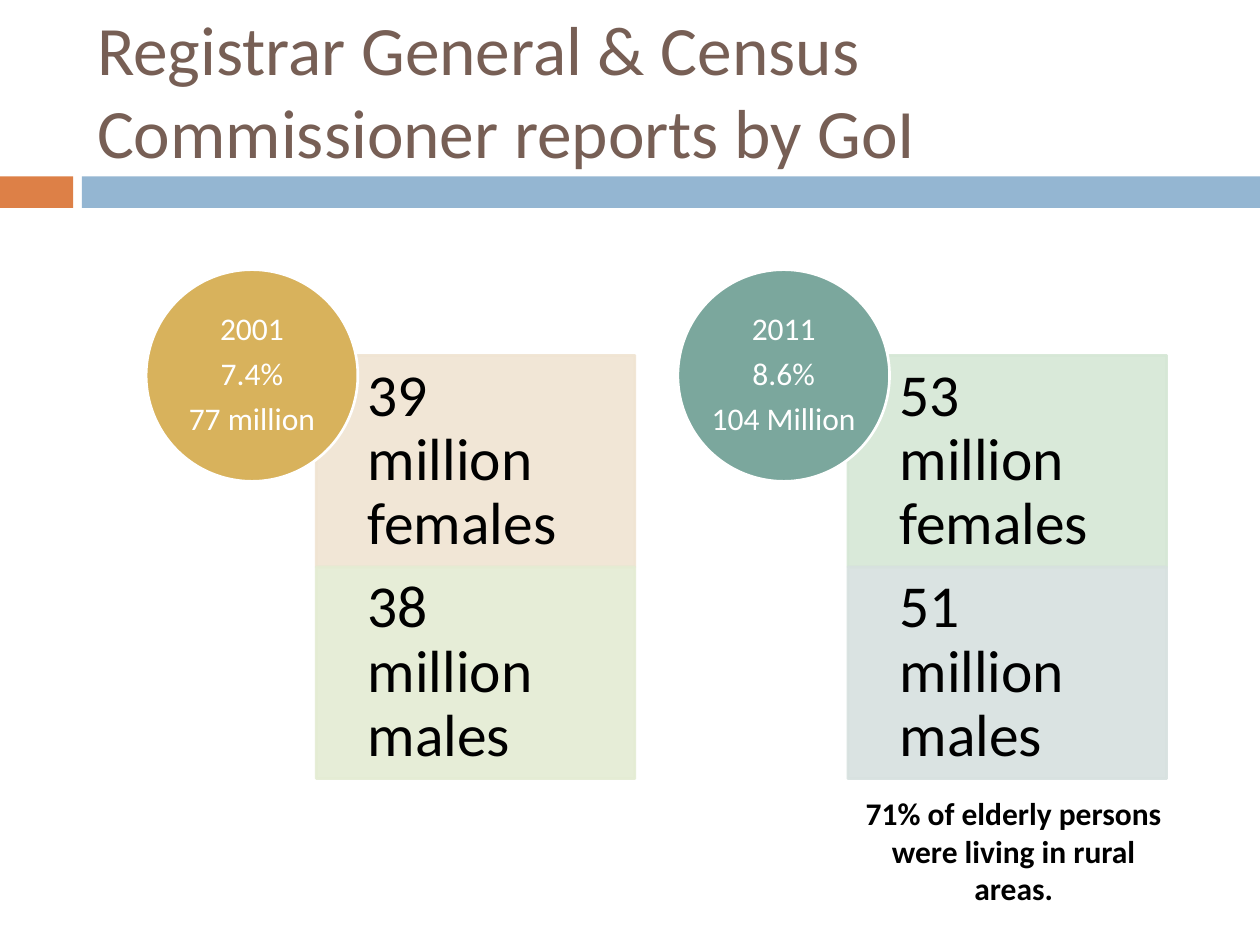
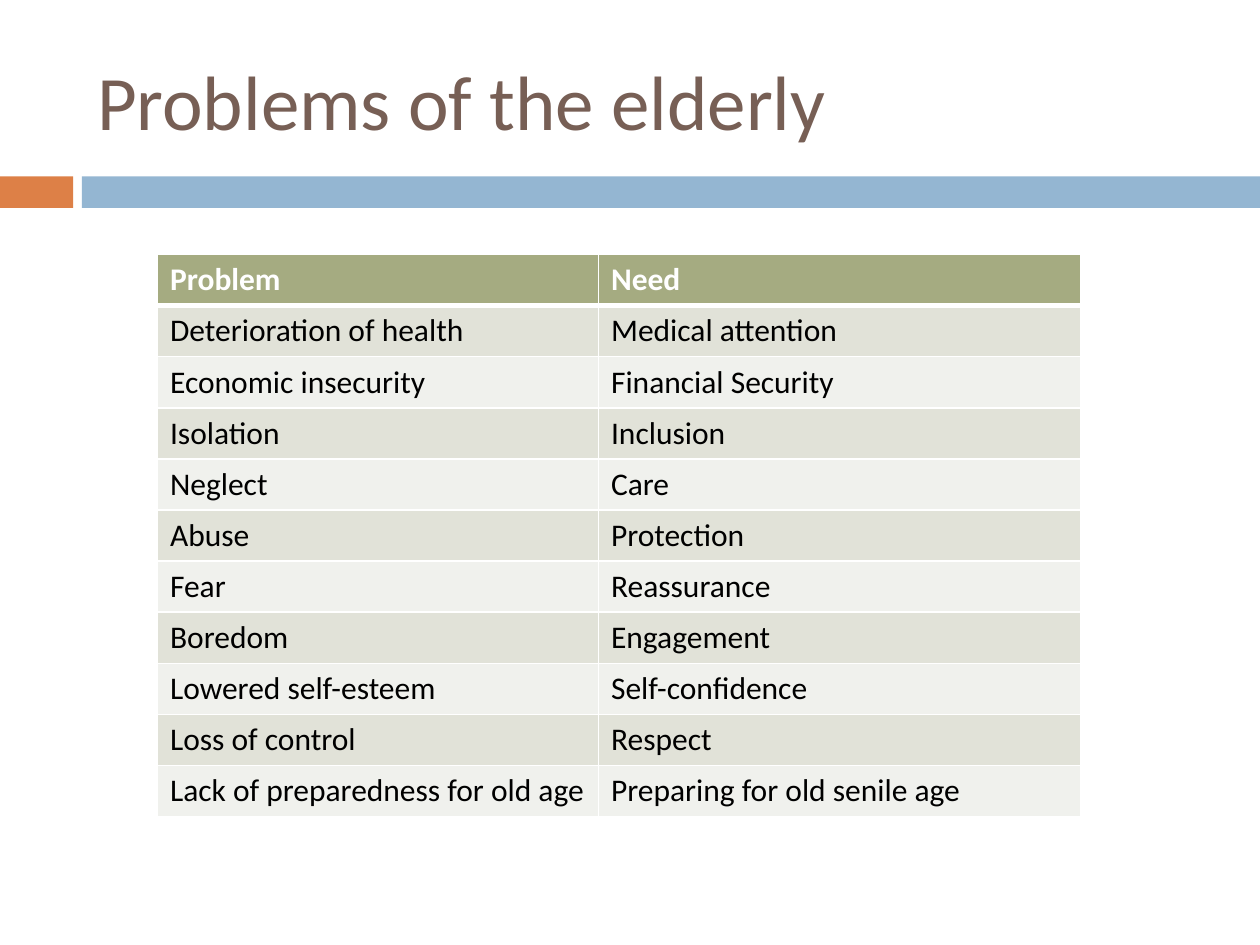
"""Build two slides on the elderly: census counts and a table of problems and needs."""
import dataclasses
import typing

import lxml.etree
import pptx
import pptx.dml.color
import pptx.enum.shapes
import pptx.enum.text
import pptx.oxml.ns
import pptx.presentation
import pptx.shapes.autoshape
import pptx.slide
import pptx.table
import pptx.text.text
import pptx.util

Inches = pptx.util.Inches
Kind = pptx.enum.shapes.MSO_SHAPE
Align = pptx.enum.text.PP_ALIGN
Anchor = pptx.enum.text.MSO_ANCHOR
Fit = pptx.enum.text.MSO_AUTO_SIZE
Rect = tuple[float, float, float, float]


@dataclasses.dataclass(frozen=True)
class Theme:
    font: str = "Calibri"
    title: str = "775F55"
    ink: str = "000000"
    white: str = "FFFFFF"
    head: str = "A5AB81"
    odd: str = "E1E2D8"
    even: str = "F0F1ED"
    big: float = 44
    long: float = 39.6
    count: float = 34
    body: float = 18
    line: float = 1.5


@dataclasses.dataclass(frozen=True)
class Band:
    left: float
    width: float
    fill: str


@dataclasses.dataclass(frozen=True)
class Box:
    text: str
    fill: str


@dataclasses.dataclass(frozen=True)
class Census:
    left: float
    label: str
    fill: str
    boxes: tuple[Box, ...]


THEME = Theme()
BANDS = (Band(0, 0.58, "DD8047"), Band(0.65, 9.35, "94B6D2"))
SIDE = 1.68
YEARS = (
    Census(1.16, "2001\n7.4%\n77 million", "D8B25C", (
        Box("39 million females", "F0E4D2"), Box("38 million males", "E4ECD3"))),
    Census(5.38, "2011\n8.6%\n104 Million", "7BA79D", (
        Box("53 million females", "D5E7D5"), Box("51 million males", "D7E1DF"))),
)
ROWS = (
    ("Problem", "Need"),
    ("Deterioration of health", "Medical attention"),
    ("Economic insecurity", "Financial Security"),
    ("Isolation", "Inclusion"),
    ("Neglect", "Care"),
    ("Abuse", "Protection"),
    ("Fear", "Reassurance"),
    ("Boredom", "Engagement"),
    ("Lowered self-esteem", "Self-confidence"),
    ("Loss of control", "Respect"),
    ("Lack of preparedness for old age", "Preparing for old senile age"),
)


def tint(code: str) -> pptx.dml.color.RGBColor:
    """Turn a hex code into a colour."""
    return pptx.dml.color.RGBColor.from_string(code)


def write(frame: pptx.text.text.TextFrame, text: str, *, size: float = THEME.body,
          color: str = THEME.ink, bold: bool = False, align: Align = Align.LEFT,
          anchor: typing.Optional[Anchor] = None, pad: typing.Optional[Rect] = None,
          pitch: float = 1, gap: float = 0) -> None:
    """Fill a frame with one paragraph per line of text."""
    frame.word_wrap = True
    if anchor is not None:
        frame.vertical_anchor = anchor
    if pad is not None:
        (frame.margin_left, frame.margin_top,
         frame.margin_right, frame.margin_bottom) = map(Inches, pad)
    frame.text = text
    for para in frame.paragraphs:
        para.alignment = align
        para.line_spacing = pitch
        para.space_before = pptx.util.Pt(0)
        para.space_after = pptx.util.Pt(gap * size)
        font = para.runs[0].font
        font.name, font.bold = THEME.font, bold
        font.size, font.color.rgb = pptx.util.Pt(size), tint(color)


def draw(slide: pptx.slide.Slide, kind: Kind, rect: Rect, fill: str,
         line: typing.Optional[str] = None,
         alpha: typing.Optional[int] = None) -> pptx.shapes.autoshape.Shape:
    """Draw a plain shape, with an outline and opacity if asked."""
    shape = slide.shapes.add_shape(kind, *map(Inches, rect))
    shape.shadow.inherit = False
    shape.fill.solid()
    shape.fill.fore_color.rgb = tint(fill)
    if line is None:
        shape.line.fill.background()
    else:
        shape.line.color.rgb = tint(line)
        shape.line.width = pptx.util.Pt(THEME.line)
    if alpha is not None:
        for node in shape.element.spPr.iter(pptx.oxml.ns.qn("a:srgbClr")):
            lxml.etree.SubElement(node, pptx.oxml.ns.qn("a:alpha"), val=str(alpha * 1000))
    return shape


def start(deck: pptx.presentation.Presentation, text: str, top: float,
          size: float) -> pptx.slide.Slide:
    """Add a slide with its bands and title."""
    slide = deck.slides.add_slide(deck.slide_layouts.get_by_name("Title Only"))
    for band in BANDS:
        draw(slide, Kind.RECTANGLE, (band.left, 1.4, band.width, 0.25), band.fill)
    title = slide.shapes.title
    title.left, title.top, title.width, title.height = map(Inches, (0.67, top, 8.92, 1.08))
    write(title.text_frame, text, size=size, color=THEME.title, anchor=Anchor.MIDDLE)
    title.text_frame.auto_size = Fit.NONE
    return slide


def tally(slide: pptx.slide.Slide, year: Census) -> None:
    """Draw one census year: stacked boxes under a circle."""
    for row, box in enumerate(year.boxes):
        rect = (year.left + 1.35, 2.82 + row * SIDE, 2.53, SIDE)
        shape = draw(slide, Kind.RECTANGLE, rect, box.fill, box.fill, 90)
        write(shape.text_frame, box.text, size=THEME.count, anchor=Anchor.MIDDLE,
              pad=(0.41, 0.26, 0.26, 0.26), pitch=0.9, gap=0.35)
    disc = draw(slide, Kind.OVAL, (year.left, 2.14, SIDE, SIDE), year.fill, THEME.white)
    write(disc.text_frame, year.label, color=THEME.white, align=Align.CENTER,
          anchor=Anchor.MIDDLE, pad=(0, 0, 0, 0), pitch=0.9, gap=0.35)


def rule(cell: pptx.table._Cell, side: str, width: float) -> None:
    """Give one side of a cell a white border."""
    qn = pptx.oxml.ns.qn
    props = cell._tc.get_or_add_tcPr()
    edge = lxml.etree.SubElement(props, qn(f"a:ln{side}"), w=str(pptx.util.Pt(width)))
    fill = lxml.etree.SubElement(edge, qn("a:solidFill"))
    lxml.etree.SubElement(fill, qn("a:srgbClr"), val=THEME.white)


def grid(slide: pptx.slide.Slide) -> None:
    """Draw the table of problems and needs."""
    rect = map(Inches, (1.25, 2.02, 7.33, 4.46))
    table = slide.shapes.add_table(len(ROWS), len(ROWS[0]), *rect).table
    for col, width in zip(table.columns, (3.5, 3.83)):
        col.width = Inches(width)
    for row, texts in enumerate(ROWS):
        head = row == 0
        fill = THEME.head if head else THEME.odd if row % 2 else THEME.even
        for col, text in enumerate(texts):
            cell = table.cell(row, col)
            for side in "LRTB":
                thick = (head and side == "B") or (row == 1 and side == "T")
                rule(cell, side, 3 if thick else 1)
            cell.fill.solid()
            cell.fill.fore_color.rgb = tint(fill)
            write(cell.text_frame, text, bold=head,
                  color=THEME.white if head else THEME.ink)


def main() -> None:
    """Build and save the deck."""
    deck = pptx.Presentation()
    deck.slide_width, deck.slide_height = Inches(10), Inches(7.5)
    slide = start(deck, "Registrar General & Census Commissioner reports by GoI",
                  0.17, THEME.long)
    for year in YEARS:
        tally(slide, year)
    note = slide.shapes.add_textbox(*map(Inches, (6.67, 6.25, 2.75, 1.01))).text_frame
    write(note, "71% of elderly persons were living in rural areas.",
          bold=True, align=Align.CENTER)
    note.auto_size = Fit.SHAPE_TO_FIT_TEXT
    grid(start(deck, "Problems of the elderly", 0.25, THEME.big))
    deck.save("out.pptx")


if __name__ == "__main__":
    main()
